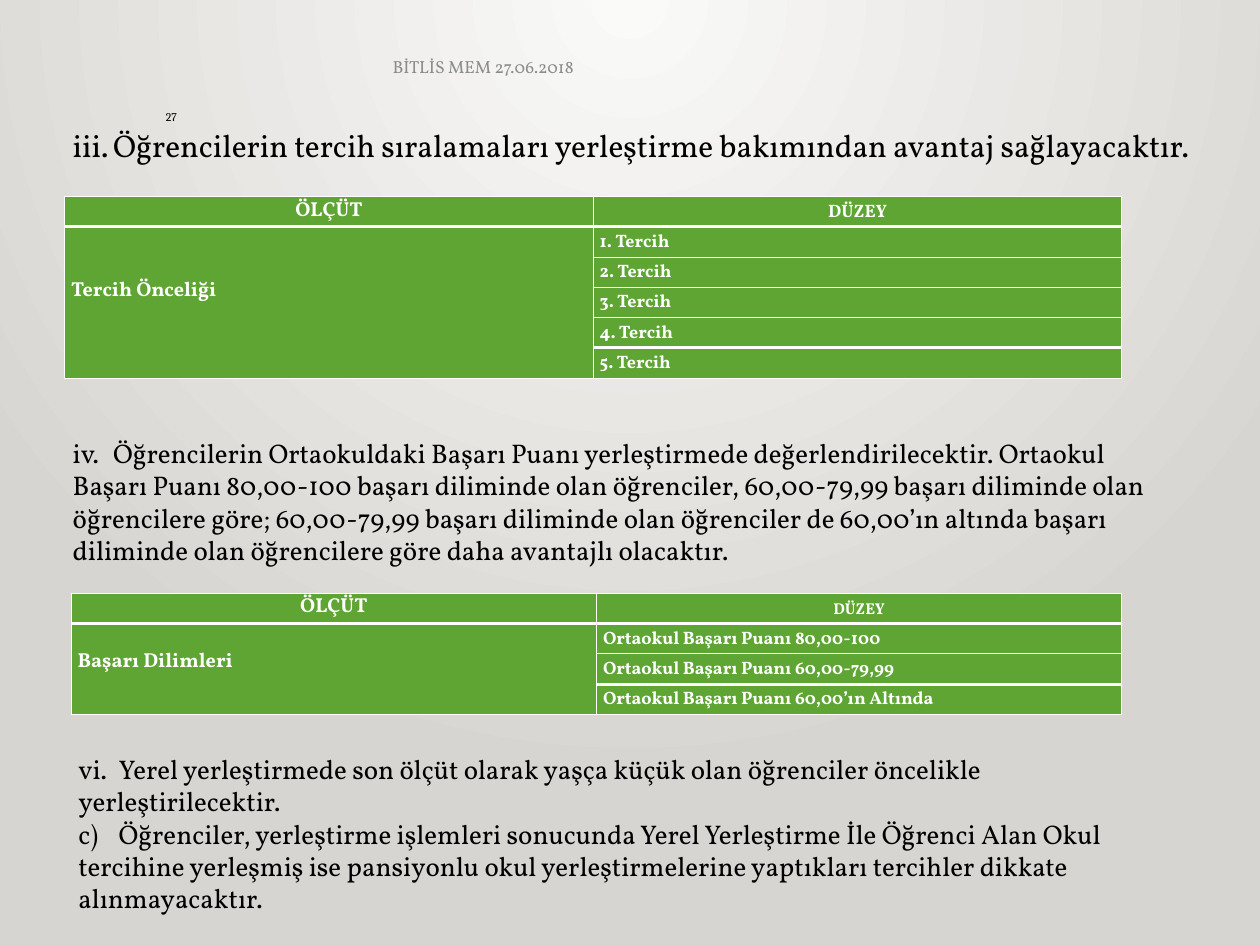
import lxml.etree
import pptx
import pptx.dml.color
import pptx.enum.text
import pptx.oxml.ns
import pptx.util

Pt = pptx.util.Pt
qn = pptx.oxml.ns.qn
ALIGN = pptx.enum.text.PP_ALIGN
ANCHOR = pptx.enum.text.MSO_ANCHOR

BLACK = pptx.dml.color.RGBColor(0x00, 0x00, 0x00)
WHITE = pptx.dml.color.RGBColor(0xFF, 0xFF, 0xFF)
GREEN = pptx.dml.color.RGBColor(0x5F, 0xA5, 0x34)
GREY = pptx.dml.color.RGBColor(0x8C, 0x8C, 0x8C)
GLOW = pptx.dml.color.RGBColor(0xFA, 0xFA, 0xF9)
STONE = pptx.dml.color.RGBColor(0xD7, 0xD5, 0xD2)

HEADING = {"name": "Vollkorn", "size": Pt(28), "bold": False}
BODY = {"name": "Vollkorn", "size": Pt(24), "bold": False}
CELL = {"name": "Vollkorn", "size": Pt(16), "bold": True}
LABEL = {"name": "Vollkorn", "size": Pt(18), "bold": True}
SMALL = {"name": "Vollkorn", "size": Pt(14), "bold": True}
DATE = {"name": "Vollkorn", "size": Pt(15.6)}
NUMBER = {"name": "Cambria", "size": Pt(10.5)}

TAB_STOP = 36
CELL_LINE = 12.7
CELL_INDENT = 5.8

TITLE = "iii.\tÖğrencilerin tercih sıralamaları yerleştirme bakımından avantaj sağlayacaktır."
SCORE_RULE = (
    "iv.\tÖğrencilerin Ortaokuldaki Başarı Puanı yerleştirmede değerlendirilecektir. "
    "Ortaokul Başarı Puanı 80,00-100 başarı diliminde olan öğrenciler, 60,00-79,99 başarı "
    "diliminde olan öğrencilere göre; 60,00-79,99 başarı diliminde olan öğrenciler de "
    "60,00’ın altında başarı diliminde olan öğrencilere göre daha avantajlı olacaktır."
)
AGE_RULE = (
    "vi.\tYerel yerleştirmede son ölçüt olarak yaşça küçük olan öğrenciler öncelikle "
    "yerleştirilecektir."
)
BOARDING_RULE = (
    "c)\tÖğrenciler, yerleştirme işlemleri sonucunda Yerel Yerleştirme İle Öğrenci Alan Okul "
    "tercihine yerleşmiş ise pansiyonlu okul yerleştirmelerine yaptıkları tercihler dikkate "
    "alınmayacaktır."
)
CHOICES = [f"{rank}. Tercih" for rank in range(1, 6)]
SCORES = [f"Ortaokul Başarı Puanı {band}"
          for band in ("80,00-100", "60,00-79,99", "60,00’ın Altında")]


def set_values(target, values):
    for name, value in values.items():
        setattr(target, name, value)


def write_span(para, text, style, color):
    span = para.add_run()
    span.text = text
    set_values(span.font, style)
    span.font.color.rgb = color


def paint_background(page):
    fill = page.background.fill
    fill.gradient()
    for stop, color, position in zip(fill.gradient_stops, (GLOW, STONE), (0, 1)):
        stop.color.rgb = color
        stop.position = position
    gradient = page.element.find(".//" + qn("a:gradFill"))
    for linear in gradient.findall(qn("a:lin")):
        gradient.remove(linear)
    circle = lxml.etree.SubElement(gradient, qn("a:path"), {"path": "circle"})
    lxml.etree.SubElement(circle, qn("a:fillToRect"),
                          {"l": "43000", "r": "43000", "b": "100000"})


def place_rules(holder, box, texts, style):
    """Fill a placeholder with numbered rules, each number followed by a tab."""
    set_values(holder, dict(zip(("left", "top", "width", "height"), map(Pt, box))))
    frame = holder.text_frame
    set_values(frame, {"word_wrap": True, "vertical_anchor": ANCHOR.TOP,
                       "auto_size": pptx.enum.text.MSO_AUTO_SIZE.NONE})
    for index, text in enumerate(texts):
        para = frame.add_paragraph() if index else frame.paragraphs[0]
        set_values(para, {"alignment": ALIGN.LEFT, "space_before": Pt(0)})
        properties = para._p.get_or_add_pPr()
        properties.set("marL", "0")
        properties.set("indent", "0")
        lxml.etree.SubElement(properties, qn("a:buNone"))
        tabs = lxml.etree.SubElement(properties, qn("a:tabLst"))
        lxml.etree.SubElement(tabs, qn("a:tab"), {"pos": str(Pt(TAB_STOP)), "algn": "l"})
        write_span(para, text, style, BLACK)


def place_note(page, box, text, style, color, alignment, anchor):
    frame = page.shapes.add_textbox(*map(Pt, box)).text_frame
    set_values(frame, {"word_wrap": True, "vertical_anchor": anchor,
                       "margin_left": 0, "margin_right": 0,
                       "margin_top": 0, "margin_bottom": 0})
    para = frame.paragraphs[0]
    para.alignment = alignment
    write_span(para, text, style, color)


def dress_cell(cell, heavy_sides):
    """White borders, heavy on the given sides, around a green cell."""
    properties = cell._tc.get_or_add_tcPr()
    for side in "LRTB":
        width = Pt(3 if side in heavy_sides else 1)
        line = lxml.etree.SubElement(properties, qn(f"a:ln{side}"), {"w": str(width)})
        solid = lxml.etree.SubElement(line, qn("a:solidFill"))
        lxml.etree.SubElement(solid, qn("a:srgbClr"), {"val": str(WHITE)})
    cell.fill.solid()
    cell.fill.fore_color.rgb = GREEN


def write_cell(cell, text, style, drop=CELL_LINE, spacing=Pt(CELL_LINE), centred=False):
    set_values(cell, {"margin_left": Pt(0 if centred else CELL_INDENT), "margin_right": 0,
                      "margin_top": Pt(drop), "margin_bottom": 0,
                      "vertical_anchor": ANCHOR.TOP})
    para = cell.text_frame.paragraphs[0]
    set_values(para, {"alignment": ALIGN.CENTER if centred else ALIGN.LEFT,
                      "line_spacing": spacing})
    write_span(para, text, style, WHITE)


def place_criteria(page, box, label, label_drop, levels, level_style):
    """One criterion on the left, its levels listed on the right."""
    last = len(levels)
    table = page.shapes.add_table(last + 1, 2, *map(Pt, box)).table
    set_values(table, {"first_row": False, "horz_banding": False})
    for column in table.columns:
        column.width = Pt(box[2] / 2)
    for row in table.rows:
        row.height = Pt(box[3] / (last + 1))

    # Heavy lines lie under the header and above the last level
    for row in range(last + 1):
        for column in range(2):
            heavy_rows = {1, last} if column else {1}
            sides = ("T" if row in heavy_rows else "") + ("B" if row + 1 in heavy_rows else "")
            dress_cell(table.cell(row, column), sides)
    table.cell(1, 0).merge(table.cell(last, 0))

    write_cell(table.cell(0, 0), "ÖLÇÜT", LABEL, centred=True)
    write_cell(table.cell(0, 1), "DÜZEY", level_style, centred=True)
    write_cell(table.cell(1, 0), label, LABEL, drop=label_drop, spacing=1.0)
    for row, level in enumerate(levels, 1):
        write_cell(table.cell(row, 1), level, CELL)


def build_placement_page(deck):
    page = deck.slides.add_slide(deck.slide_layouts[3])
    paint_background(page)
    title, score_body, final_body = page.placeholders

    # Rules in the title and body placeholders
    place_rules(title, (57.6, 108.7, 1031.8, 41), [TITLE], HEADING)
    place_rules(score_body, (57.6, 385.2, 995.8, 124), [SCORE_RULE], BODY)
    place_rules(final_body, (62.6, 666.7, 954.7, 152), [AGE_RULE, BOARDING_RULE], BODY)

    # Criteria tables
    place_criteria(page, (57.6, 175, 941.8, 162), "Tercih Önceliği", 45, CHOICES, CELL)
    place_criteria(page, (63.4, 528.5, 936, 108), "Başarı Dilimleri", 22, SCORES, SMALL)

    # Date line and page number
    place_note(page, (188.6, 40.3, 483.8, 38.2), "BİTLİS MEM 27.06.2018",
               DATE, GREY, ALIGN.CENTER, ANCHOR.MIDDLE)
    place_note(page, (59.8, 97.9, 97.9, 61.9), "27",
               NUMBER, BLACK, ALIGN.RIGHT, ANCHOR.TOP)


def main():
    deck = pptx.Presentation()
    set_values(deck, {"slide_width": Pt(1122.5), "slide_height": Pt(841.7)})
    build_placement_page(deck)
    deck.save("out.pptx")


if __name__ == "__main__":
    main()
